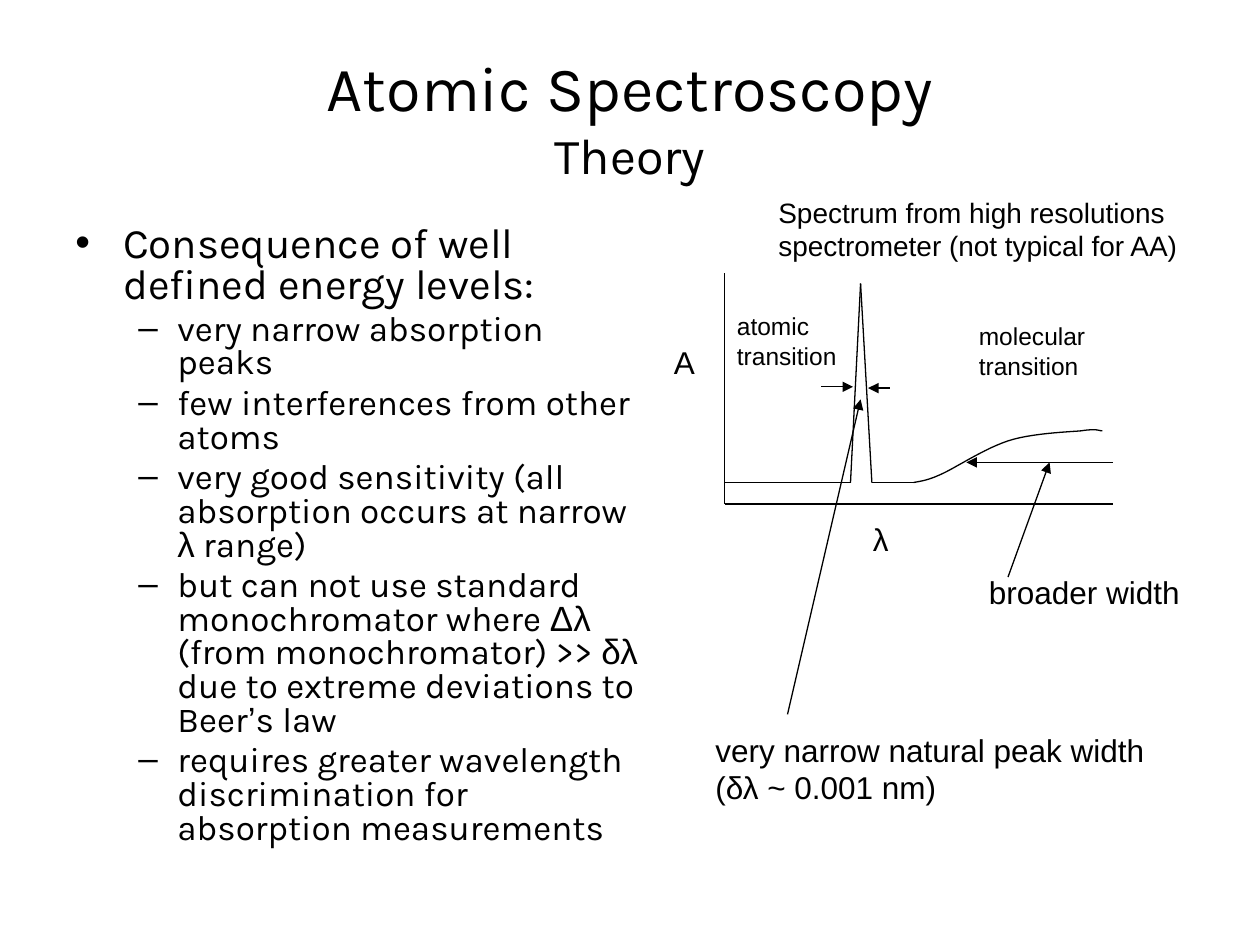
from itertools import groupby

from lxml.etree import SubElement
from pptx import Presentation
from pptx.dml.color import RGBColor
from pptx.enum.shapes import MSO_CONNECTOR as Connector
from pptx.enum.text import MSO_ANCHOR as Anchor, MSO_AUTO_SIZE as AutoSize, PP_ALIGN as Align
from pptx.oxml.ns import qn
from pptx.util import Inches, Pt

COLORS = {"ink": "000000", "paper": "FFFFFF"}
ARIAL_SYMBOLS = "Δλδ’"

POINTS = [
    "very narrow absorption peaks",
    "few interferences from other atoms",
    "very good sensitivity (all absorption occurs at narrow λ range)",
    "but can not use standard monochromator where Δλ (from monochromator) >> "
    "δλ due to extreme deviations to Beer’s law",
    "requires greater wavelength discrimination for absorption measurements",
]
LABELS = [
    ("λ", 6.83, 4.08, 1.5, 0.4, 18),
    ("A", 5.25, 2.67, 0.42, 0.4, 18),
    ("Spectrum from high resolutions spectrometer (not typical for AA)", 6.08, 1.5, 3.5, 0.64, 16),
    ("atomic transition", 5.75, 2.42, 1.08, 0.57, 14),
    ("molecular transition", 7.67, 2.5, 1.08, 0.57, 14),
    ("very narrow natural peak width (δλ ~ 0.001 nm)", 5.58, 5.75, 3.75, 0.7, 18),
    ("broader width", 7.75, 4.5, 1.92, 0.4, 18),
]
AXES = [(5.75, 2.17), (5.75, 4), (8.83, 4)]
ATOMIC_PEAK = [(5.75, 3.83), (6.75, 3.83), (6.83, 2.25), (6.92, 3.83), (7.25, 3.83)]
MOLECULAR_BAND = [
    (7.25, 3.83), (7.31, 3.82), (7.38, 3.81), (7.5, 3.75), (7.62, 3.69), (7.82, 3.56), (8, 3.5),
    (8.18, 3.44), (8.46, 3.43), (8.58, 3.42), (8.71, 3.4), (8.72, 3.42), (8.75, 3.42),
]
ARROWS = [
    ((6.52, 3.07), (6.77, 3.07)),
    ((7.06, 3.08), (6.89, 3.08)),
    ((6.25, 5.67), (6.83, 3.17)),
    ((8.83, 3.67), (7.67, 3.67)),
    ((8, 4.58), (8.33, 3.67)),
]


def color(name):
    """Return a palette colour."""
    return RGBColor.from_string(COLORS[name])


def style_run(run, size, font):
    """Set the size, typeface and colour of a run."""
    run.font.size = Pt(size)
    run.font.name = font
    run.font.color.rgb = color("ink")


def add_frame(slide, left, top, width, height):
    """Add a wrapping text box and return its text frame."""
    box = slide.shapes.add_textbox(Inches(left), Inches(top), Inches(width), Inches(height))
    box.text_frame.word_wrap = True
    return box.text_frame


def add_title(slide):
    """Add the centred heading with its smaller second line."""
    frame = add_frame(slide, 0.5, 0.3, 9, 1.25)
    frame.vertical_anchor = Anchor.MIDDLE
    heading = frame.paragraphs[0]
    heading.text = "Atomic Spectroscopy\vTheory"
    heading.alignment = Align.CENTER
    for run, size in zip(heading.runs, (36, 28.8)):
        style_run(run, size, "Karla")


def format_bullet(paragraph, text, size, mark, margin, hang, level):
    """Fill a bulleted paragraph, setting its symbols in Arial."""
    paragraph.level = level
    paragraph.line_spacing = 0.8
    paragraph.space_before = Pt(size * 0.2)
    properties = paragraph._p.get_or_add_pPr()
    properties.set("marL", str(Inches(margin)))
    properties.set("indent", str(-Inches(hang)))
    SubElement(properties, qn("a:buFont")).set("typeface", "Arial")
    SubElement(properties, qn("a:buChar")).set("char", mark)
    for is_symbol, letters in groupby(text, lambda letter: letter in ARIAL_SYMBOLS):
        run = paragraph.add_run()
        run.text = "".join(letters)
        style_run(run, size, "Arial" if is_symbol else "Karla")


def add_consequences(slide):
    """Add the bulleted list of consequences."""
    frame = add_frame(slide, 0.5, 1.75, 4.67, 4.95)
    lead = "Consequence of well defined energy levels:"
    format_bullet(frame.paragraphs[0], lead, 24, "•", 0.38, 0.38, 0)
    for point in POINTS:
        format_bullet(frame.add_paragraph(), point, 20, "–", 0.81, 0.31, 1)


def add_label(slide, text, left, top, width, height, size):
    """Add a label to the spectrum."""
    frame = add_frame(slide, left, top, width, height)
    frame.auto_size = AutoSize.SHAPE_TO_FIT_TEXT
    frame.text = text
    style_run(frame.paragraphs[0].runs[0], size, "Arial")


def add_line(slide, start, end, arrow=False):
    """Add a thin straight line, with an arrowhead at its end if wanted."""
    line = slide.shapes.add_connector(Connector.STRAIGHT, *map(Inches, (*start, *end)))
    line.line.color.rgb = color("ink")
    line.line.width = Pt(0.75)
    if arrow:
        SubElement(line.line._get_or_add_ln(), qn("a:tailEnd")).set("type", "triangle")
    SubElement(line._element.spPr, qn("a:effectLst"))


def bezier_point(controls, t):
    """Return the point at t on a cubic Bezier segment."""
    weights = ((1 - t) ** 3, 3 * t * (1 - t) ** 2, 3 * t**2 * (1 - t), t**3)
    return tuple(Inches(sum(w * c for w, c in zip(weights, axis))) for axis in zip(*controls))


def add_curve(slide, controls, steps=12):
    """Add an open smooth outline through chained Bezier segments."""
    points = [
        bezier_point(controls[first:first + 4], step / steps)
        for first in range(0, len(controls) - 1, 3)
        for step in range(1, steps + 1)
    ]
    builder = slide.shapes.build_freeform(*map(Inches, controls[0]))
    builder.add_line_segments(points, close=False)
    curve = builder.convert_to_shape()
    curve.shadow.inherit = False
    curve.fill.background()
    curve.line.color.rgb = color("ink")
    curve.line.width = Pt(0.75)


def main():
    """Build the slide and save it."""
    deck = Presentation()
    deck.slide_width, deck.slide_height = Inches(10), Inches(7.5)
    slide = deck.slides.add_slide(deck.slide_layouts[6])
    slide.background.fill.solid()
    slide.background.fill.fore_color.rgb = color("paper")
    add_title(slide)
    add_consequences(slide)
    for trace in (AXES, ATOMIC_PEAK):
        for start, end in zip(trace, trace[1:]):
            add_line(slide, start, end)
    add_curve(slide, MOLECULAR_BAND)
    for label in LABELS:
        add_label(slide, *label)
    for start, end in ARROWS:
        add_line(slide, start, end, arrow=True)
    deck.save("out.pptx")


if __name__ == "__main__":
    main()
